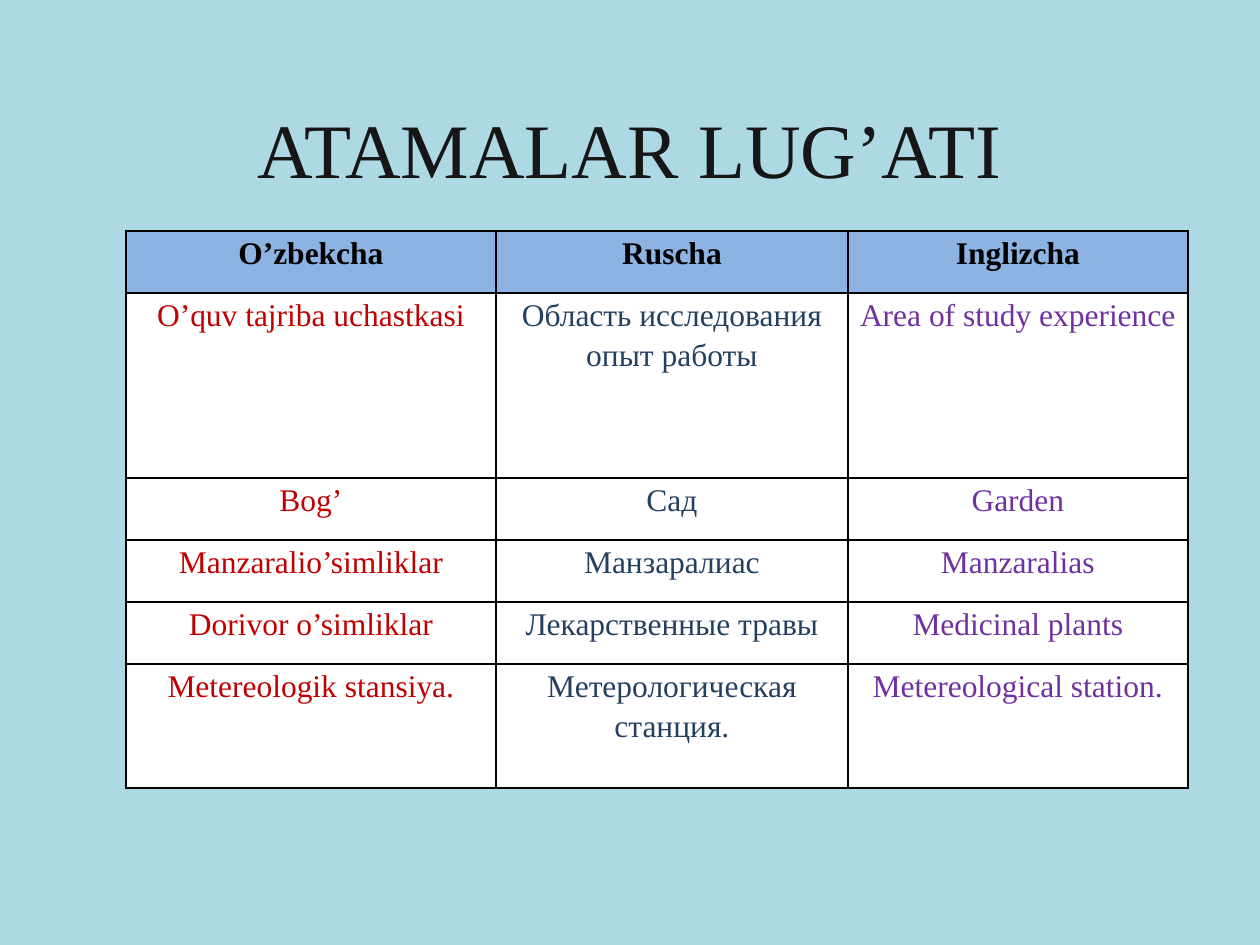
from dataclasses import dataclass

from lxml import etree
from pptx import Presentation
from pptx.dml.color import RGBColor
from pptx.enum.text import MSO_ANCHOR, PP_ALIGN
from pptx.oxml.ns import qn
from pptx.util import Pt

CENTER = PP_ALIGN.CENTER
MIDDLE = MSO_ANCHOR.MIDDLE
TOP = MSO_ANCHOR.TOP

EMU_PER_PX = 914400 // 126
FONT = "Times New Roman"
SKY = RGBColor(0xAC, 0xD9, 0xE4)
CHARCOAL = RGBColor(0x16, 0x16, 0x16)
BLACK = RGBColor(0x00, 0x00, 0x00)
WHITE = RGBColor(0xFF, 0xFF, 0xFF)
HEADER_BLUE = RGBColor(0x8D, 0xB3, 0xE2)
RED = RGBColor(0xC0, 0x00, 0x00)
NAVY = RGBColor(0x24, 0x40, 0x61)
PURPLE = RGBColor(0x70, 0x30, 0xA0)


@dataclass(frozen=True)
class Language:
    name: str
    width: int
    color: RGBColor


@dataclass(frozen=True)
class Term:
    translations: tuple[str, str, str]
    height: int


LANGUAGES = (
    Language("O’zbekcha", 370, RED),
    Language("Ruscha", 352, NAVY),
    Language("Inglizcha", 340, PURPLE),
)
HEADER_HEIGHT = 62
TERMS = (
    Term(("O’quv tajriba uchastkasi", "Область исследования опыт работы",
          "Area of study experience"), 185),
    Term(("Bog’", "Сад", "Garden"), 62),
    Term(("Manzaralio’simliklar", "Манзаралиас", "Manzaralias"), 62),
    Term(("Dorivor o’simliklar", "Лекарственные травы", "Medicinal plants"), 62),
    Term(("Metereologik stansiya.", "Метерологическая станция.",
          "Metereological station."), 124),
)


def px(length: int) -> int:
    return length * EMU_PER_PX


def write(frame, text: str, size: int, color: RGBColor, bold: bool = False):
    paragraph = frame.paragraphs[0]
    paragraph.alignment = CENTER
    run = paragraph.add_run()
    run.text = text
    run.font.name = FONT
    run.font.size = Pt(size)
    run.font.bold = bold
    run.font.color.rgb = color
    return paragraph


def add_borders(cell) -> None:
    properties = cell._tc.get_or_add_tcPr()
    for position, side in enumerate(("lnL", "lnR", "lnT", "lnB")):
        line = etree.Element(qn(f"a:{side}"), w=str(Pt(1)))
        fill = etree.SubElement(line, qn("a:solidFill"))
        etree.SubElement(fill, qn("a:srgbClr"), val=str(BLACK))
        properties.insert(position, line)


def fill_cell(cell, text: str, color: RGBColor, background: RGBColor, bold: bool) -> None:
    cell.fill.solid()
    cell.fill.fore_color.rgb = background
    cell.margin_left = cell.margin_right = px(9)
    cell.margin_top = cell.margin_bottom = 0
    cell.vertical_anchor = TOP
    write(cell.text_frame, text, 18, color, bold).line_spacing = 1.15
    add_borders(cell)


def add_title(slide) -> None:
    title = slide.shapes.title
    title.left, title.top, title.width, title.height = map(px, (63, 53, 1134, 189))
    title.text_frame.vertical_anchor = MIDDLE
    write(title.text_frame, "ATAMALAR LUG’ATI", 44, CHARCOAL)


def add_glossary(slide) -> None:
    heights = [HEADER_HEIGHT, *(term.height for term in TERMS)]
    width = sum(language.width for language in LANGUAGES)
    glossary = slide.shapes.add_table(
        len(heights), len(LANGUAGES), px(126), px(231), px(width), px(sum(heights))
    ).table
    glossary.first_row = False
    glossary.horz_banding = False
    for row, height in zip(glossary.rows, heights):
        row.height = px(height)
    for column, language in enumerate(LANGUAGES):
        glossary.columns[column].width = px(language.width)
        fill_cell(glossary.cell(0, column), language.name, BLACK, HEADER_BLUE, True)
        for row, term in enumerate(TERMS, start=1):
            fill_cell(glossary.cell(row, column), term.translations[column],
                      language.color, WHITE, False)


def main() -> None:
    presentation = Presentation()
    presentation.slide_width = px(1260)
    presentation.slide_height = px(945)
    slide = presentation.slides.add_slide(presentation.slide_layouts[5])
    slide.background.fill.solid()
    slide.background.fill.fore_color.rgb = SKY
    add_title(slide)
    add_glossary(slide)
    presentation.save("out.pptx")


if __name__ == "__main__":
    main()
